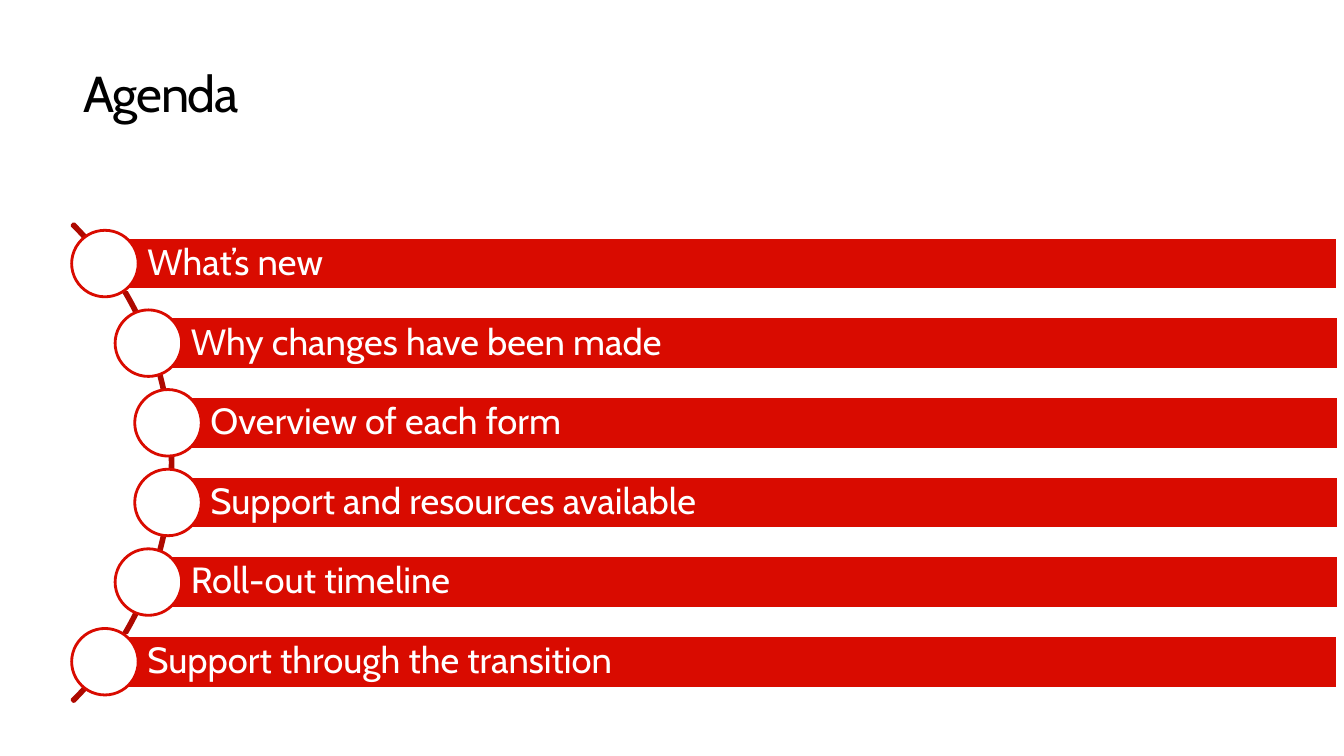
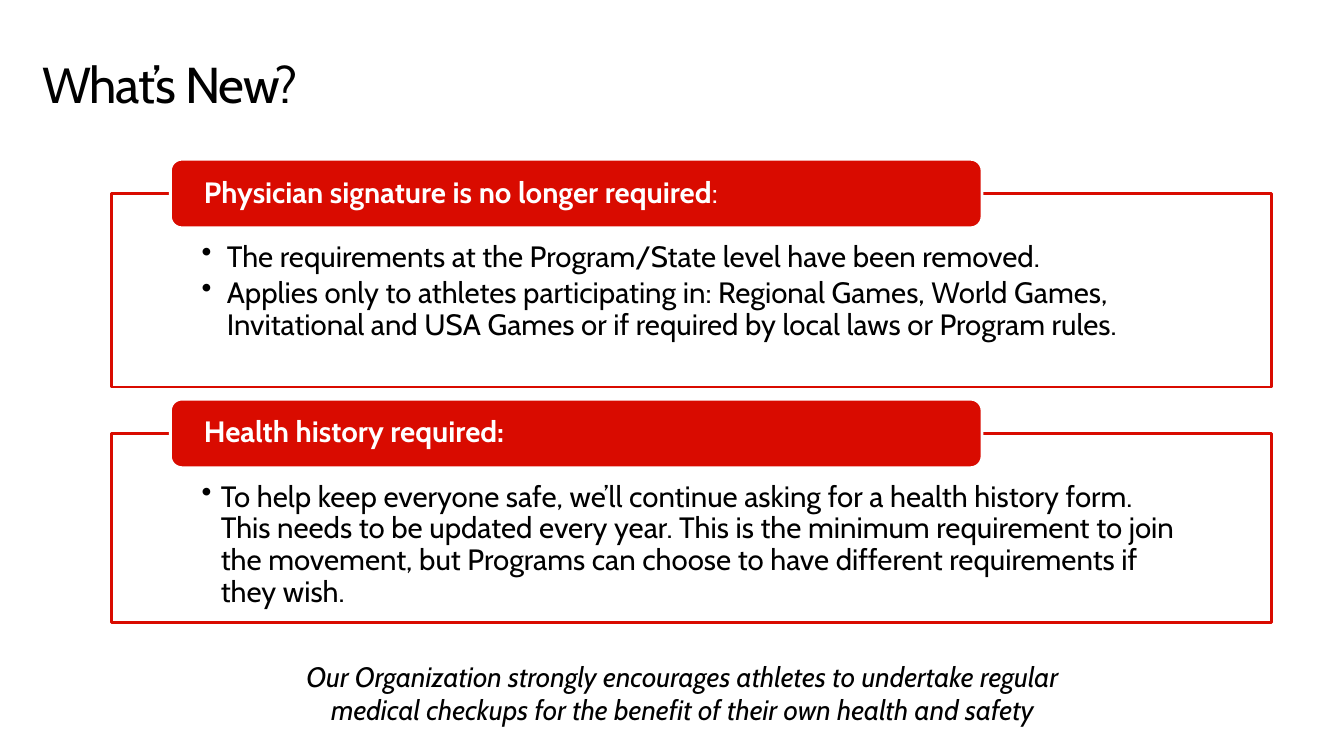
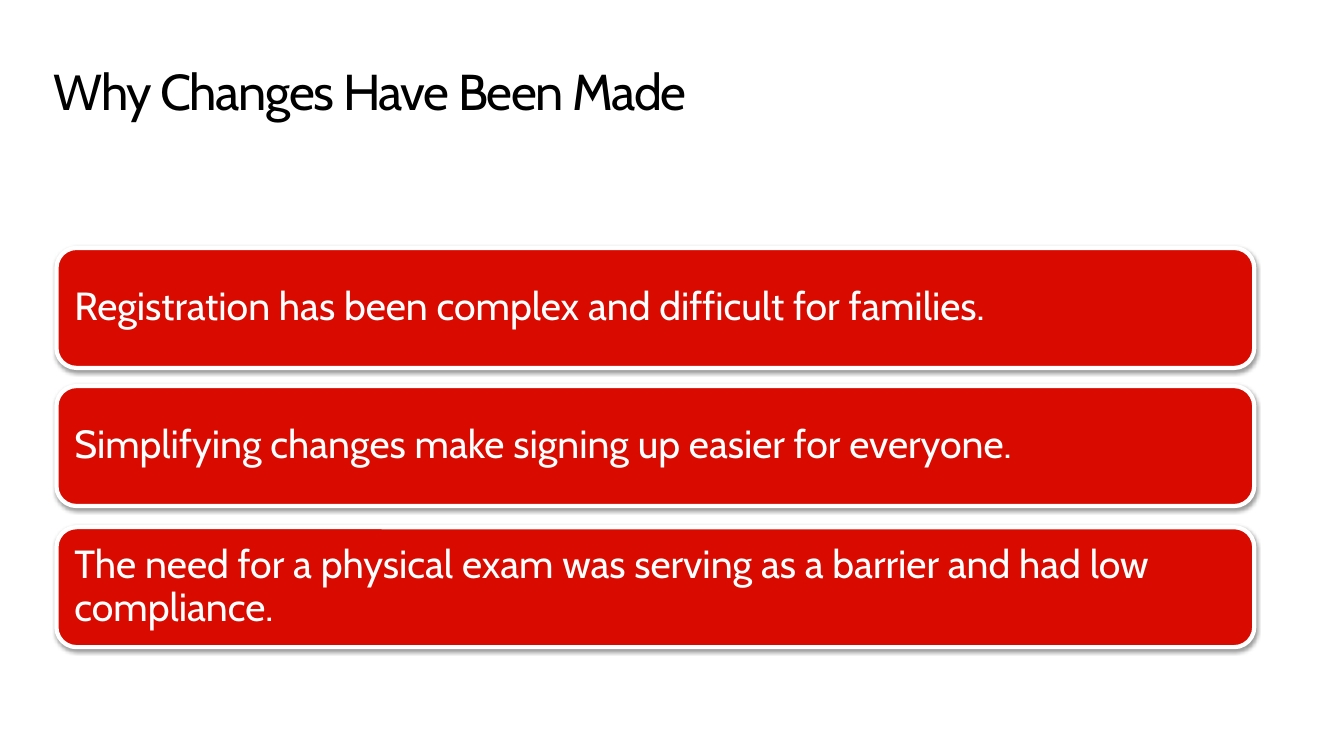
from dataclasses import dataclass
from math import sqrt

from lxml.etree import SubElement
from pptx import Presentation
from pptx.dml.color import RGBColor
from pptx.enum.shapes import MSO_SHAPE
from pptx.enum.text import MSO_ANCHOR, MSO_AUTO_SIZE, PP_ALIGN
from pptx.oxml.ns import qn
from pptx.util import Inches, Pt


@dataclass(frozen=True)
class Theme:
    font: str = "Cabin"
    red: RGBColor = RGBColor(0xD9, 0x0B, 0x00)
    dark_red: RGBColor = RGBColor(0xAE, 0x09, 0x00)
    white: RGBColor = RGBColor(0xFF, 0xFF, 0xFF)
    black: RGBColor = RGBColor(0, 0, 0)
    title_size: int = 36
    agenda_size: int = 26
    card_size: int = 28
    body_size: int = 21
    note_size: int = 20


class SlideBuilder:
    def __init__(self, theme):
        self.theme = theme
        self.deck = Presentation()
        self.deck.slide_width = Inches(13.33)
        self.deck.slide_height = Inches(7.5)
        self.page = None

    def start_page(self, title, left, top, width, height):
        self.page = self.deck.slides.add_slide(self.deck.slide_layouts[5])
        box = self.page.shapes.title
        box.left, box.top = Inches(left), Inches(top)
        box.width, box.height = Inches(width), Inches(height)
        para = self.set_text(box, [title], self.theme.title_size,
                             self.theme.black, (0.04,) * 4)[0]
        para.line_spacing = Pt(36)
        para.runs[0].font._element.set("spc", "-100")

    def shape(self, kind, left, top, width, height, fill, line, weight=2):
        box = self.page.shapes.add_shape(
            kind, Inches(left), Inches(top), Inches(width), Inches(height))
        box.shadow.inherit = False
        if fill is None:
            box.fill.background()
        else:
            box.fill.solid()
            box.fill.fore_color.rgb = fill
        box.line.color.rgb = line
        box.line.width = Pt(weight)
        return box

    def set_text(self, box, lines, size, color, insets,
                 anchor=MSO_ANCHOR.MIDDLE, align=PP_ALIGN.LEFT):
        frame = box.text_frame
        frame.word_wrap = True
        frame.auto_size = MSO_AUTO_SIZE.NONE
        frame.vertical_anchor = anchor
        (frame.margin_left, frame.margin_top,
         frame.margin_right, frame.margin_bottom) = map(Inches, insets)
        frame.text = "\n".join(lines)
        for para in frame.paragraphs:
            para.alignment = align
            para.line_spacing = 0.9
            para.font.name = self.theme.font
            para.font.size = Pt(size)
            para.font.color.rgb = color
        return frame.paragraphs

    def agenda_arc(self, center_x, center_y, diameter):
        arc = self.shape(MSO_SHAPE.BLOCK_ARC, center_x - diameter / 2,
                         center_y - diameter / 2, diameter, diameter,
                         None, self.theme.dark_red)
        for index, value in enumerate((189, 27, 0.4 / 100)):
            arc.adjustments[index] = value

    def agenda_row(self, center_x, center_y, text):
        bar_height, circle_size, bar_right = 0.52, 0.66, 13.27
        bar = self.shape(MSO_SHAPE.RECTANGLE, center_x,
                         center_y - bar_height / 2, bar_right - center_x,
                         bar_height, self.theme.red, self.theme.white)
        self.set_text(bar, [text], self.theme.agenda_size, self.theme.white,
                      (0.42, 0.07, 0.07, 0.07))
        self.shape(MSO_SHAPE.OVAL, center_x - circle_size / 2,
                   center_y - circle_size / 2, circle_size, circle_size,
                   self.theme.white, self.theme.red)

    def panel(self, top, height, heading, suffix, bullets, indent):
        panel = self.shape(MSO_SHAPE.RECTANGLE, 1.11, top, 11.5, height,
                           self.theme.white, self.theme.red)
        fill = panel._element.spPr.find(qn("a:solidFill"))
        SubElement(fill[0], qn("a:alpha"), val="90000")
        paras = self.set_text(panel, bullets, self.theme.body_size,
                              self.theme.black, (0.89, 0.48, 0.89, 0.16),
                              MSO_ANCHOR.TOP)
        for para in paras:
            para.space_after = Pt(3)
            self.bullet(para, indent)
        tab = self.shape(MSO_SHAPE.ROUNDED_RECTANGLE, 1.69, top - 0.34,
                         8.05, 0.68, self.theme.red, self.theme.white)
        para = self.set_text(tab, [heading], self.theme.body_size,
                             self.theme.white, (0.3, 0, 0.3, 0))[0]
        para.runs[0].font.bold = True
        if suffix:
            span = para.add_run()
            span.text = suffix
            span.font.bold = False

    def bullet(self, para, indent):
        properties = para._p.get_or_add_pPr()
        properties.set("marL", str(Inches(indent)))
        properties.set("indent", str(-Inches(indent)))
        mark = SubElement(properties, qn("a:buChar"), char="•")
        properties.find(qn("a:defRPr")).addprevious(mark)

    def note(self, lines):
        box = self.page.shapes.add_textbox(
            Inches(0.46), Inches(6.49), Inches(12.62), Inches(0.77))
        paras = self.set_text(box, lines, self.theme.note_size,
                              self.theme.black, (0.1, 0.05, 0.1, 0.05),
                              MSO_ANCHOR.TOP, PP_ALIGN.CENTER)
        for para in paras:
            para.line_spacing = 1.0
            para.font.italic = True

    def card(self, top, text):
        card = self.shape(MSO_SHAPE.ROUNDED_RECTANGLE, 0.56, top, 11.88, 1.19,
                          self.theme.red, self.theme.white, 3)
        effects = card._element.spPr.find(qn("a:effectLst"))
        shadow = SubElement(effects, qn("a:outerShdw"), blurRad=str(Pt(3.1)),
                            dist=str(Pt(1.6)), dir="5400000", rotWithShape="0")
        color = SubElement(shadow, qn("a:srgbClr"), val=str(self.theme.black))
        SubElement(color, qn("a:alpha"), val="38000")
        self.set_text(card, [text], self.theme.card_size, self.theme.white,
                      (0.12,) * 4)


def build_agenda(builder):
    builder.start_page("Agenda", 0.79, 0.4, 10.28, 1.14)
    topics = ["What’s new", "Why changes have been made",
              "Overview of each form", "Support and resources available",
              "Roll-out timeline", "Support through the transition"]
    arc_x, arc_y, radius, pitch = -1.64, 4.59, 3.33, 0.79
    builder.agenda_arc(arc_x, arc_y, 6.71)
    for index, topic in enumerate(topics):
        offset = (index - (len(topics) - 1) / 2) * pitch
        builder.agenda_row(arc_x + sqrt(radius ** 2 - offset ** 2),
                           arc_y + offset, topic)


def build_whats_new(builder):
    builder.start_page("What’s New?", 0.38, 0.15, 11.5, 1.45)
    builder.panel(1.92, 1.92, "Physician signature is no longer required", ":", [
        "The requirements at the Program/State level have been removed.",
        "Applies only to athletes participating in: Regional Games, World Games, "
        "Invitational and USA Games or if required by local laws or Program rules.",
    ], 0.25)
    builder.panel(4.3, 1.88, "Health history required:", "", [
        "To help keep everyone safe, we’ll continue asking for a health history "
        "form. This needs to be updated every year. This is the minimum "
        "requirement to join the movement, but Programs can choose to have "
        "different requirements if they wish.",
    ], 0.19)
    builder.note([
        "Our Organization strongly encourages athletes to undertake regular",
        "medical checkups for the benefit of their own health and safety",
    ])


def build_reasons(builder):
    builder.start_page("Why Changes Have Been Made", 0.49, 0.38, 10.28, 1.14)
    reasons = [
        (2.46, "Registration has been complex and difficult for families."),
        (3.83, "Simplifying changes make signing up easier for everyone."),
        (5.23, "The need for a physical exam was serving as a barrier and had "
               "low compliance."),
    ]
    for top, reason in reasons:
        builder.card(top, reason)


def main():
    builder = SlideBuilder(Theme())
    build_agenda(builder)
    build_whats_new(builder)
    build_reasons(builder)
    builder.deck.save("out.pptx")


if __name__ == "__main__":
    main()
